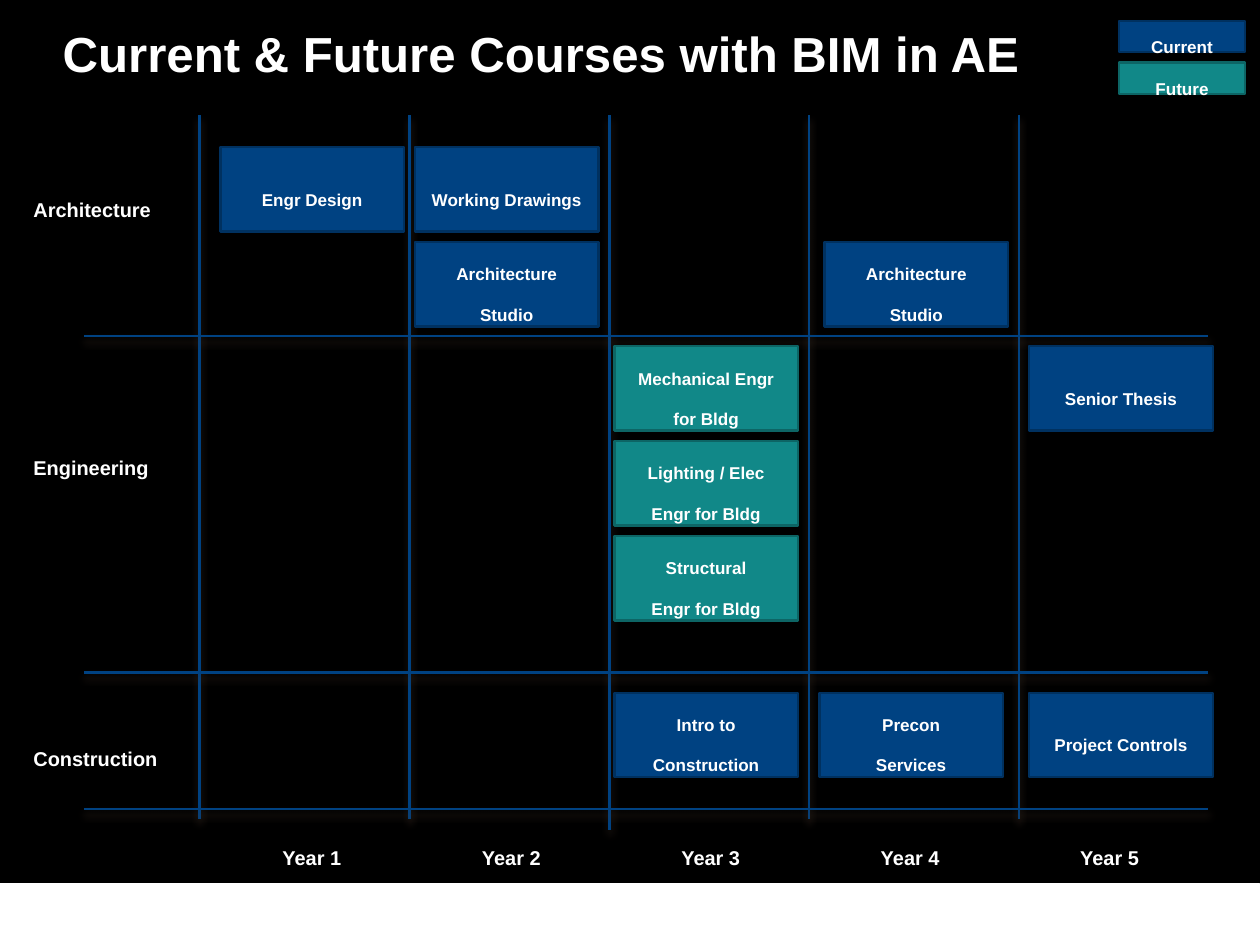
from lxml import etree
from pptx import Presentation
from pptx import util as u
from pptx.dml.color import RGBColor
from pptx.enum import shapes, text
from pptx.oxml import ns

COLOURS = {
    "background": "000000", "white": "FFFFFF", "shadow": "4E3B30",
    "current": "004282", "current edge": "003160",
    "future": "118888", "future edge": "0D6565",
}
SUBSCRIPT = "-25000"


def write(box, wording, size, align, baseline=None):
    frame = box.text_frame
    frame.word_wrap = True
    frame.margin_left = frame.margin_right = u.Cm(0.36)
    frame.margin_top = frame.margin_bottom = u.Cm(0.18)
    frame.text = wording
    for para in frame.paragraphs:
        para.alignment = align
        for span in para.runs:
            span.font.name = "Arial"
            span.font.size = u.Pt(size)
            span.font.bold = True
            span.font.color.rgb = RGBColor.from_string(COLOURS["white"])
            if baseline:
                span.font._element.set("baseline", baseline)


def add_block(left, top, width, height, fill, edge, weight):
    block = page.shapes.add_shape(
        shapes.MSO_SHAPE.RECTANGLE, u.Cm(left), u.Cm(top), u.Cm(width), u.Cm(height))
    block.shadow.inherit = False
    block.fill.solid()
    block.fill.fore_color.rgb = RGBColor.from_string(COLOURS[fill])
    block.line.color.rgb = RGBColor.from_string(COLOURS[edge])
    block.line.width = u.Pt(weight)
    return block


deck = Presentation()
deck.slide_width, deck.slide_height = u.Cm(36.14), u.Cm(27.1)
page = deck.slides.add_slide(deck.slide_layouts[6])
page.background.fill.solid()
page.background.fill.fore_color.rgb = RGBColor.from_string(COLOURS["background"])

add_block(0, 25.35, 36.14, 1.75, "white", "white", 0.75)

title = page.shapes.add_textbox(u.Cm(1.8), u.Cm(0), u.Cm(32.54), u.Cm(3.02))
write(title, "Current & Future Courses with BIM in AE", 40, text.PP_ALIGN.LEFT)
title.text_frame.vertical_anchor = text.MSO_ANCHOR.MIDDLE
title.text_frame.margin_left = title.text_frame.margin_right = 0
title.text_frame.margin_top = title.text_frame.margin_bottom = 0

year_lines = [(x, 3.3, x, 23.8 if x == 17.48 else 23.5)
              for x in (5.72, 11.75, 17.48, 23.2, 29.23)]
field_lines = [(2.41, y, 34.65, y) for y in (9.64, 19.28, 23.2)]
for ends in year_lines + field_lines:
    rule = page.shapes.add_connector(
        shapes.MSO_CONNECTOR.STRAIGHT, *[u.Cm(end) for end in ends])
    rule.line.color.rgb = RGBColor.from_string(COLOURS["current"])
    rule.line.width = u.Pt(2)
    effects = etree.SubElement(rule._element.spPr, ns.qn("a:effectLst"))
    shadow = etree.SubElement(
        effects, ns.qn("a:outerShdw"), blurRad=str(u.Pt(6)), dist=str(u.Pt(4)),
        dir="5400000", rotWithShape="0")
    tint = etree.SubElement(shadow, ns.qn("a:srgbClr"), val=COLOURS["shadow"])
    etree.SubElement(tint, ns.qn("a:alpha"), val="60000")

years = [(f"Year {number + 1}", 6.53 + 5.72 * number, 23.4, 4.83, 1.18,
          text.PP_ALIGN.CENTER) for number in range(5)]
fields = [(name, 0.6, top, 5.4, height, text.PP_ALIGN.LEFT)
          for name, top, height in (
              ("Architecture", 4.83, 1.96),
              ("Engineering", 12.22, 1.18),
              ("Construction", 20.57, 1.96))]
for name, left, top, width, height, align in years + fields:
    label = page.shapes.add_textbox(u.Cm(left), u.Cm(top), u.Cm(width), u.Cm(height))
    write(label, name, 28, align, SUBSCRIPT)
    label.text_frame.auto_size = text.MSO_AUTO_SIZE.SHAPE_TO_FIT_TEXT

CARD_WIDTH, CARD_HEIGHT, CARD_PITCH = 5.27, 2.42, 2.72
ARCHITECTURE, ENGINEERING, CONSTRUCTION = 4.22, 9.93, 19.87
courses = [
    ("Engr Design", 6.32, ARCHITECTURE, 0, "current"),
    ("Working Drawings", 11.9, ARCHITECTURE, 0, "current"),
    ("Architecture Studio", 11.9, ARCHITECTURE, 1, "current"),
    ("Architecture Studio", 23.65, ARCHITECTURE, 1, "current"),
    ("Mechanical Engr for Bldg", 17.62, ENGINEERING, 0, "future"),
    ("Lighting / Elec Engr for Bldg", 17.62, ENGINEERING, 1, "future"),
    ("Structural\vEngr for Bldg", 17.62, ENGINEERING, 2, "future"),
    ("Senior Thesis", 29.52, ENGINEERING, 0, "current"),
    ("Intro to Construction", 17.62, CONSTRUCTION, 0, "current"),
    ("Precon\nServices", 23.5, CONSTRUCTION, 0, "current"),
    ("Project Controls", 29.52, CONSTRUCTION, 0, "current"),
]
cards = [(name, left, top + CARD_PITCH * step, CARD_WIDTH, CARD_HEIGHT, status)
         for name, left, top, step, status in courses]
legend = [("Current", 32.1, 0.6, 3.61, 0.9, "current"),
          ("Future", 32.1, 1.8, 3.61, 0.9, "future")]
for name, left, top, width, height, status in cards + legend:
    card = add_block(left, top, width, height, status, f"{status} edge", 2)
    write(card, name, 24, text.PP_ALIGN.CENTER, SUBSCRIPT)
    card.text_frame.vertical_anchor = text.MSO_ANCHOR.MIDDLE

deck.save("out.pptx")
